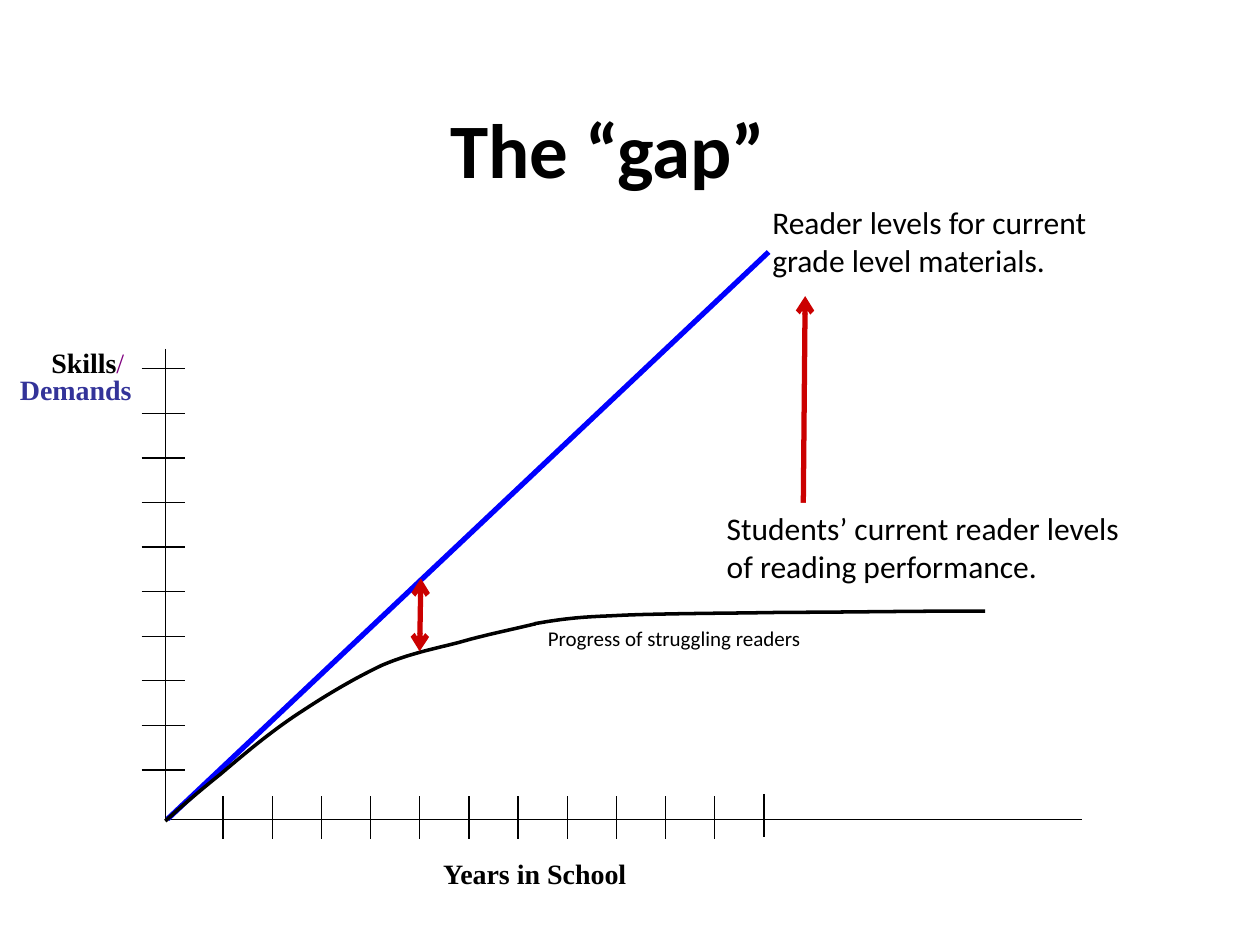
from lxml import etree
from pptx import Presentation
from pptx.dml.color import RGBColor
from pptx.enum.shapes import MSO_CONNECTOR, MSO_SHAPE
from pptx.enum.text import MSO_ANCHOR, PP_ALIGN
from pptx.oxml.ns import qn
from pptx.util import Pt

STRAIGHT = MSO_CONNECTOR.STRAIGHT
RECTANGLE = MSO_SHAPE.RECTANGLE
TOP, MIDDLE = MSO_ANCHOR.TOP, MSO_ANCHOR.MIDDLE
LEFT, CENTER = PP_ALIGN.LEFT, PP_ALIGN.CENTER

BLACK = RGBColor(0x00, 0x00, 0x00)
WHITE = RGBColor(0xFF, 0xFF, 0xFF)
BLUE = RGBColor(0x00, 0x00, 0xFF)
RED = RGBColor(0xCB, 0x00, 0x00)
INDIGO = RGBColor(0x33, 0x33, 0x99)
PURPLE = RGBColor(0x80, 0x00, 0x80)
CURVE_STEPS = 12

presentation = Presentation()
presentation.slide_width, presentation.slide_height = Pt(720), Pt(540)
slide = presentation.slides.add_slide(presentation.slide_layouts[6])


def add_line(start, end, color=BLACK, width=0.75, arrows=False):
    line = slide.shapes.add_connector(
        STRAIGHT, Pt(start[0]), Pt(start[1]), Pt(end[0]), Pt(end[1]))
    line.line.color.rgb = color
    line.line.width = Pt(width)
    if arrows:
        for tag in ("a:headEnd", "a:tailEnd"):
            etree.SubElement(line.line._get_or_add_ln(), qn(tag), type="arrow")
    etree.SubElement(line._element.spPr, qn("a:effectLst"))


def write_text(shape, lines, format_values, wrap=True, anchor=TOP, align=LEFT):
    frame = shape.text_frame
    frame.word_wrap = wrap
    frame.vertical_anchor = anchor
    frame.text = "\n".join(lines)
    for paragraph in frame.paragraphs:
        paragraph.alignment = align
        for run in paragraph.runs:
            for name, value in format_values.items():
                if name == "color":
                    run.font.color.rgb = value
                else:
                    setattr(run.font, name, value)


# Title
title = slide.shapes.add_textbox(Pt(48.24), Pt(30.24), Pt(598.32), Pt(108))
write_text(title, ["The “gap”"],
           {"name": "Calibri", "size": Pt(44), "bold": True, "color": BLACK},
           anchor=MIDDLE, align=CENTER)

# Axes and ticks
add_line((94.5, 199.4), (94.5, 468.5))
add_line((94.5, 468.5), (618.5, 468.5))
for index in range(12):
    x = 127.5 + 28.1 * index
    top = 453.6 if index == 11 else 455
    add_line((x, top), (x, top + 24.5))
for index in range(10):
    y = 210.7 + 25.48 * index
    add_line((81, y), (105.5, y))

# Grade level demands
add_line((95.8, 468), (439.2, 144), BLUE, 3)

# Progress of struggling readers: a start point, then cubic segments
progress_curves = [
    [(94.5, 469.2),
     (103.7, 460.8), (113.8, 452.2), (126.5, 442),
     (139, 431.3), (156.2, 416.9), (172, 406.8),
     (187.2, 396.7), (203, 387.4), (218.2, 380.2),
     (233.3, 373.7), (247.7, 370.8), (262, 367.2),
     (276.5, 362.9), (291.6, 360), (306.2, 356.4)],
    [(305.5, 356.4),
     (314.6, 355), (324.7, 352.8), (347.8, 352),
     (371.5, 350.6), (409, 350.6), (444.2, 350),
     (480.2, 349.9), (521.3, 349.2), (563, 349.2)],
]
for curve in progress_curves:
    vertices = []
    for first in range(0, len(curve) - 1, 3):
        a, b, c, d = curve[first:first + 4]
        for step in range(1, CURVE_STEPS + 1):
            t = step / CURVE_STEPS
            u = 1 - t
            vertices.append(tuple(
                Pt(u**3 * a[axis] + 3 * u * u * t * b[axis]
                   + 3 * u * t * t * c[axis] + t**3 * d[axis])
                for axis in (0, 1)))
    builder = slide.shapes.build_freeform(Pt(curve[0][0]), Pt(curve[0][1]))
    builder.add_line_segments(vertices, close=False)
    progress = builder.convert_to_shape()
    progress.fill.background()
    progress.line.color.rgb = BLACK
    progress.line.width = Pt(2)
    progress.shadow.inherit = False

# Gap arrows
add_line((239.8, 372.2), (240.5, 330.5), RED, 3, arrows=True)
add_line((458.6, 337.7), (460.1, 169.2), RED, 3, arrows=True)

# Labels: text, left, top, width, height, font, size, bold, color
labels = [
    ("Years in School", 246.2, 486, 121, 26.6, "Times New Roman", 16, True, BLACK),
    ("Skills", 22.3, 193.7, 51.8, 26.6, "Times New Roman", 16, True, BLACK),
    ("Demands", 4.3, 209.5, 78.5, 26.6, "Times New Roman", 16, True, INDIGO),
    ("/", 59.4, 193.7, 18.7, 26.6, "Times New Roman", 16, False, PURPLE),
    ("Progress of struggling readers", 306, 354.2, 177.1, 21.6, "Calibri", 12, False, BLACK),
]
for text, left, top, width, height, font, size, bold, color in labels:
    label = slide.shapes.add_textbox(Pt(left), Pt(top), Pt(width), Pt(height))
    write_text(label, [text],
               {"name": font, "size": Pt(size), "bold": bold, "color": color},
               wrap=False)

# Reader level captions
caption_format = {"name": "Calibri", "size": Pt(18), "color": BLACK}
materials = slide.shapes.add_textbox(Pt(434.2), Pt(112.3), Pt(257.8), Pt(51))
write_text(materials, ["Reader levels for current", "grade level materials."],
           caption_format)

students = slide.shapes.add_shape(RECTANGLE, Pt(408.2), Pt(287.3), Pt(257.8), Pt(51))
students.fill.solid()
students.fill.fore_color.rgb = WHITE
students.line.fill.background()
students.shadow.inherit = False
write_text(students, ["Students’ current reader levels", "of reading performance."],
           caption_format)

presentation.save("out.pptx")
